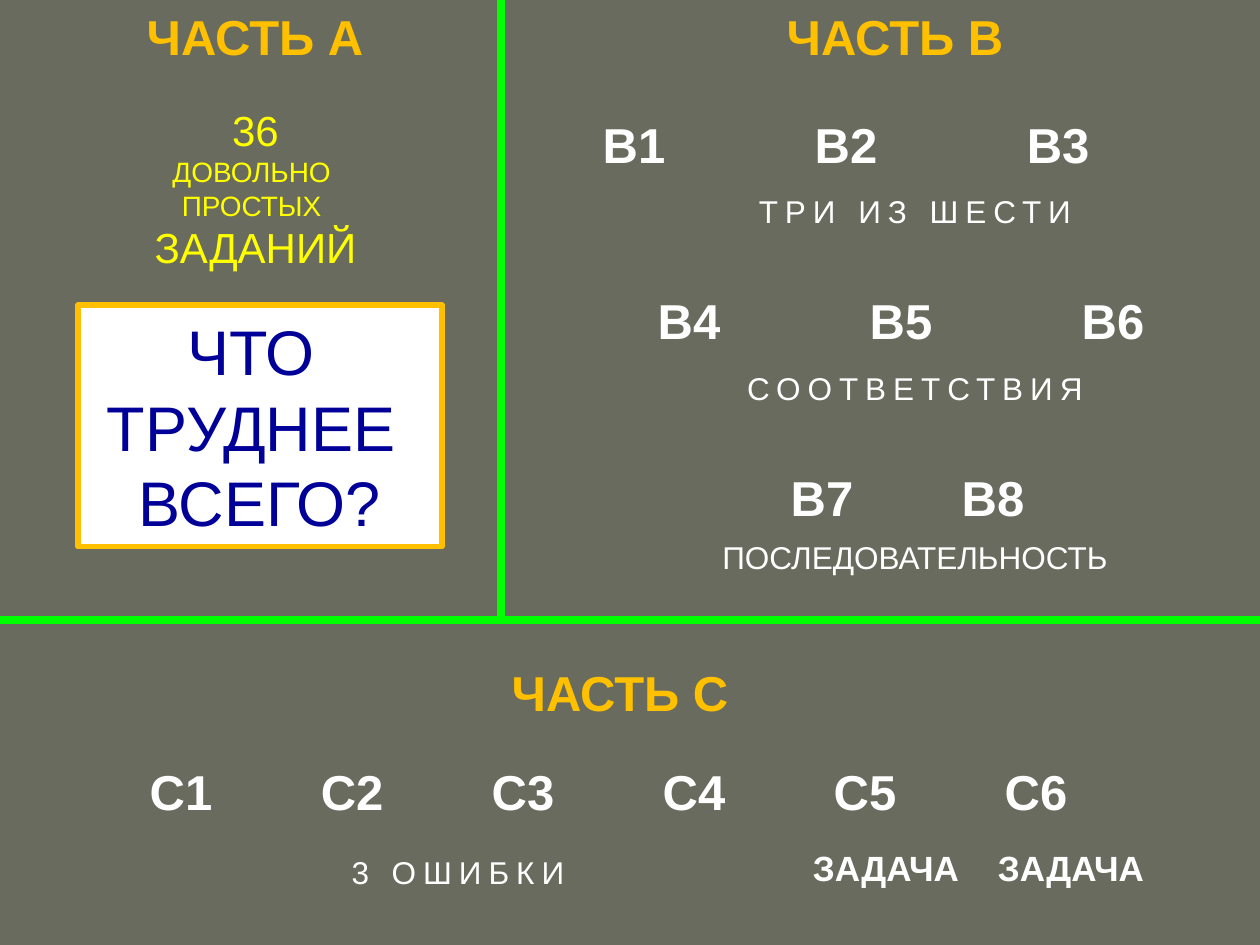
from lxml import etree
from pptx import Presentation, util as u
from pptx.dml.color import RGBColor
from pptx.enum import shapes, text
from pptx.oxml.ns import qn

PX = 914400 / 126
THEME = {
    "font": "Arial",
    "back": "686B5D", "head": "FFC000", "note": "FFFF00", "body": "FFFFFF",
    "rule": "00FF00", "card": "FFFFFF", "ask": "000099",
    "big": 36, "mark": 28, "mid": 24, "task": 20, "cap": 18, "small": 16,
}


def px(n):
    """Turn px into EMU."""
    return u.Emu(round(n * PX))


def tint(name):
    """Give a theme colour."""
    return RGBColor.from_string(THEME[name])


def write(shape, lines, color, bold=False, gap=0):
    """Fill a shape with centred lines of (words, size)."""
    frame = shape.text_frame
    frame.word_wrap = True
    for i, (words, size) in enumerate(lines):
        para = frame.paragraphs[0] if i == 0 else frame.add_paragraph()
        para.alignment = text.PP_ALIGN.CENTER
        run = para.add_run()
        run.text = words
        form = {"name": THEME["font"], "size": u.Pt(THEME[size]), "bold": bold}
        for key, val in form.items():
            setattr(run.font, key, val)
        run.font.color.rgb = tint(color)
        if gap:
            run._r.get_or_add_rPr().set("spc", str(gap * 100))


def label(slide, box, lines, color, **form):
    """Place a text box."""
    write(slide.shapes.add_textbox(*map(px, box)), lines, color, **form)


def head(slide, x, y, words):
    """Place the heading of a part."""
    label(slide, (x, y, 354, 72), [(words, "mark")], "head", bold=True)


def row(slide, mid, y, step, names, size="mark"):
    """Place bold names at an even step from a first centre."""
    for i, name in enumerate(names):
        box = (mid + i * step - 90, y, 180, 72)
        label(slide, box, [(name, size)], "body", bold=True)


def rule(slide, *ends):
    """Draw a dividing line."""
    line = slide.shapes.add_connector(shapes.MSO_CONNECTOR.STRAIGHT, *map(px, ends))
    line.line.color.rgb = tint("rule")
    line.line.width = u.Pt(4.5)
    etree.SubElement(line._element.spPr, qn("a:effectLst"))


def part_a(slide, x, y):
    """Build the left part with its question card."""
    head(slide, x + 78, y, "ЧАСТЬ А")
    lines = [("36", "mid"), ("ДОВОЛЬНО ", "small"),
             ("ПРОСТЫХ ", "small"), ("ЗАДАНИЙ", "mid")]
    label(slide, (x + 108, y + 98, 295, 183), lines, "note")
    box = map(px, (x + 78, y + 305, 364, 242))
    card = slide.shapes.add_shape(shapes.MSO_SHAPE.RECTANGLE, *box)
    card.shadow.inherit = False
    card.fill.solid()
    card.fill.fore_color.rgb = tint("card")
    card.line.color.rgb = tint("head")
    card.line.width = u.Pt(3)
    lines = [(words, "big") for words in ("ЧТО ", "ТРУДНЕЕ ", "ВСЕГО?")]
    write(card, lines, "ask")


def part_b(slide, x, y):
    """Build the right part with three captioned rows."""
    head(slide, x + 217, y, "ЧАСТЬ В")
    rows = [
        (133, 108, 212, ("В1", "В2", "В3"), 186, "ТРИ ИЗ ШЕСТИ", 4),
        (188, 284, 212, ("В4", "В5", "В6"), 363, "СООТВЕТСТВИЯ", 4),
        (321, 461, 171, ("В7", "В8"), 532, "ПОСЛЕДОВАТЕЛЬНОСТЬ", 0),
    ]
    for mid, top, step, names, low, words, gap in rows:
        row(slide, x + mid, y + top, step, names)
        box = (x + 158, y + low, 512, 50)
        label(slide, box, [(words, "cap")], "body", gap=gap)


def part_c(slide, x, y):
    """Build the bottom part with its row of tasks."""
    head(slide, x + 443, y + 36, "ЧАСТЬ С")
    row(slide, x + 181, y + 135, 171, [f"С{n}" for n in range(1, 7)])
    row(slide, x + 886, y + 220, 185, ["ЗАДАЧА"] * 2, "task")
    box = (x + 325, y + 227, 266, 50)
    label(slide, box, [("3 ОШИБКИ", "cap")], "body", gap=4)


def main():
    """Build and save the slide."""
    deck = Presentation()
    deck.slide_width, deck.slide_height = px(1260), px(945)
    slide = deck.slides.add_slide(deck.slide_layouts[6])
    slide.background.fill.solid()
    slide.background.fill.fore_color.rgb = tint("back")
    part_a(slide, 0, 0)
    part_b(slide, 501, 0)
    part_c(slide, 0, 620)
    rule(slide, 0, 620, 1260, 620)
    rule(slide, 501, 0, 501, 620)
    deck.save("out.pptx")


if __name__ == "__main__":
    main()
